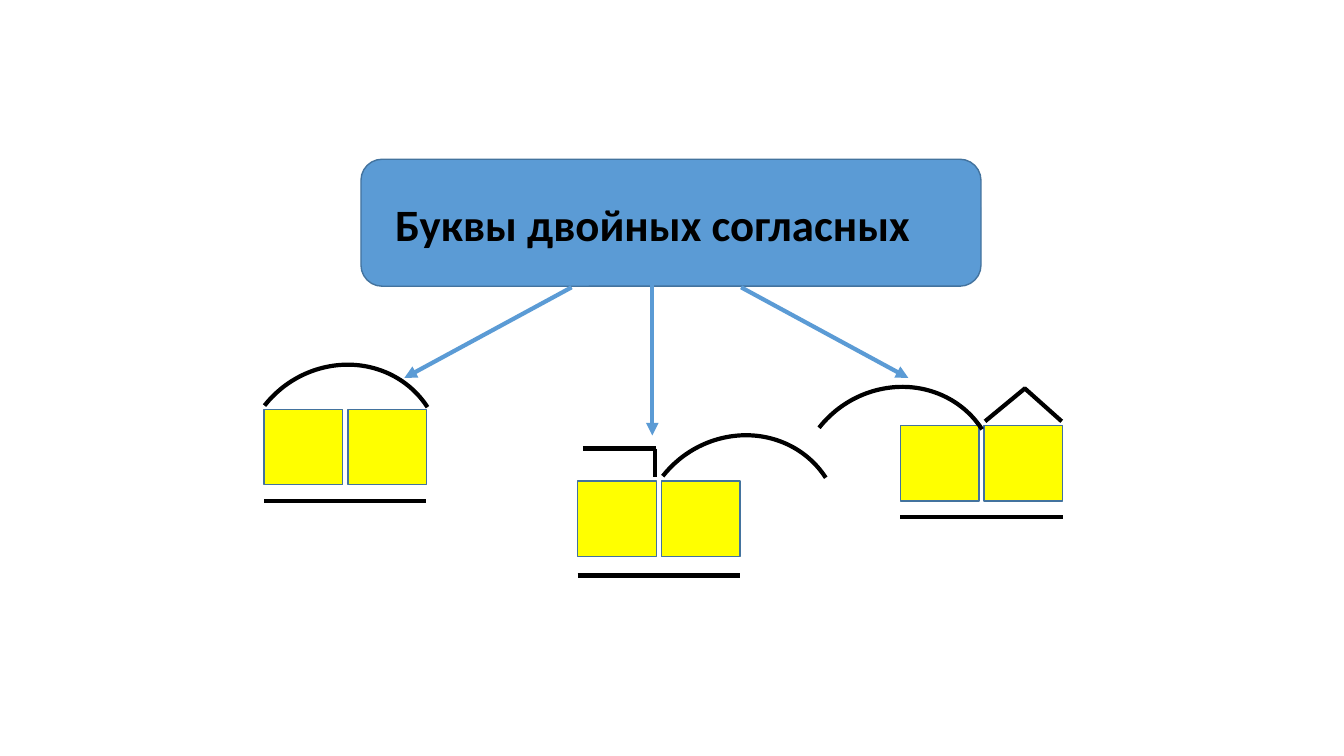
from dataclasses import dataclass
from lxml.etree import SubElement
from pptx import Presentation
from pptx.dml.color import RGBColor
from pptx.enum.shapes import MSO_CONNECTOR, MSO_SHAPE
from pptx.enum.text import MSO_ANCHOR, MSO_AUTO_SIZE, PP_ALIGN
from pptx.oxml.ns import qn
from pptx.util import Inches, Pt


@dataclass(frozen=True)
class Theme:
    blue: str = "5B9BD5"
    edge: str = "43739E"
    yellow: str = "FFFF00"
    black: str = "000000"
    font: str = "Calibri"
    title_size: int = 32
    thin: int = 1
    thick: int = 3


T = Theme()

# Content
TITLE = "Буквы двойных согласных"
TITLE_BOX = (3.58, 1.58, 6.15, 1.26)
TITLE_TEXT = (3.82, 1.9, 5.69, 0.64)
ARROWS = [(5.67, 2.85, 4.01, 3.75), (6.47, 2.68, 6.47, 4.32), (7.35, 2.85, 9.01, 3.75)]

# Each word scheme: corner of its letter pair, gap to the underline,
# root arc offset and morpheme mark strokes, all relative to that corner
SCHEMES = [
    dict(corner=(2.62, 4.06), gap=0.16, root=(-0.24, -0.42), mark=[]),
    dict(corner=(5.73, 4.77), gap=0.19, root=(0.6, -0.43),
         mark=[(0.05, -0.32, 0.78, -0.32), (0.77, -0.32, 0.77, -0.04)]),  # prefix
    dict(corner=(8.93, 4.22), gap=0.16, root=(-1.05, -0.36),
         mark=[(0.84, -0.04, 1.24, -0.37), (1.23, -0.37, 1.6, -0.04)]),  # suffix
]
CELL_W, CELL_H, PITCH = 0.78, 0.75, 0.83
ARC_W, ARC_H, ARC_TURN = 2.03, 1.92, 320.7
ARC_ENDS = (153.632, 3.44)

prs = Presentation()
prs.slide_width, prs.slide_height = Inches(13.33), Inches(7.5)
s = prs.slides.add_slide(prs.slide_layouts[5])


def rgb(color):
    return RGBColor.from_string(color)


def add_shape(kind, x, y, w, h, fill=None, line=T.edge, width=T.thin):
    sp = s.shapes.add_shape(kind, *map(Inches, (x, y, w, h)))
    sp.shadow.inherit = False
    if fill:
        sp.fill.solid()
        sp.fill.fore_color.rgb = rgb(fill)
    else:
        sp.fill.background()
    sp.line.color.rgb = rgb(line)
    sp.line.width = Pt(width)
    return sp


def add_line(x1, y1, x2, y2, color=T.black, arrow=False):
    c = s.shapes.add_connector(MSO_CONNECTOR.STRAIGHT, *map(Inches, (x1, y1, x2, y2)))
    c.line.color.rgb = rgb(color)
    c.line.width = Pt(T.thick)
    if arrow:
        SubElement(c.line._get_or_add_ln(), qn("a:tailEnd"), type="triangle")
    SubElement(c.element.spPr, qn("a:effectLst"))


def write(sp, text, size=T.title_size, color=T.black, bold=True, align=PP_ALIGN.LEFT):
    tf = sp.text_frame
    tf.word_wrap = True
    tf.auto_size = MSO_AUTO_SIZE.NONE
    tf.vertical_anchor = MSO_ANCHOR.TOP
    p = tf.paragraphs[0]
    p.alignment = align
    r = p.add_run()
    r.text = text
    r.font.name, r.font.size, r.font.bold = T.font, Pt(size), bold
    r.font.color.rgb = rgb(color)


# Heading: rounded box with the title in front of it
box = add_shape(MSO_SHAPE.ROUNDED_RECTANGLE, *TITLE_BOX, fill=T.blue)
title = s.shapes.title
title.left, title.top, title.width, title.height = map(Inches, TITLE_TEXT)
write(title, TITLE)
box.element.addnext(title.element)

# Arrows to the three schemes
for ends in ARROWS:
    add_line(*ends, color=T.blue, arrow=True)

# Word schemes
for scheme in SCHEMES:
    x, y = scheme["corner"]
    for i in range(2):
        add_shape(MSO_SHAPE.RECTANGLE, x + i * PITCH, y, CELL_W, CELL_H, fill=T.yellow)
    base = y + CELL_H + scheme["gap"]
    add_line(x, base, x + PITCH + CELL_W, base)

    dx, dy = scheme["root"]
    root = add_shape(MSO_SHAPE.ARC, x + dx, y + dy, ARC_W, ARC_H, line=T.black, width=T.thick)
    root.rotation = ARC_TURN
    root.adjustments[0], root.adjustments[1] = ARC_ENDS

    for x1, y1, x2, y2 in scheme["mark"]:
        add_line(x + x1, y + y1, x + x2, y + y2)

prs.save("out.pptx")
